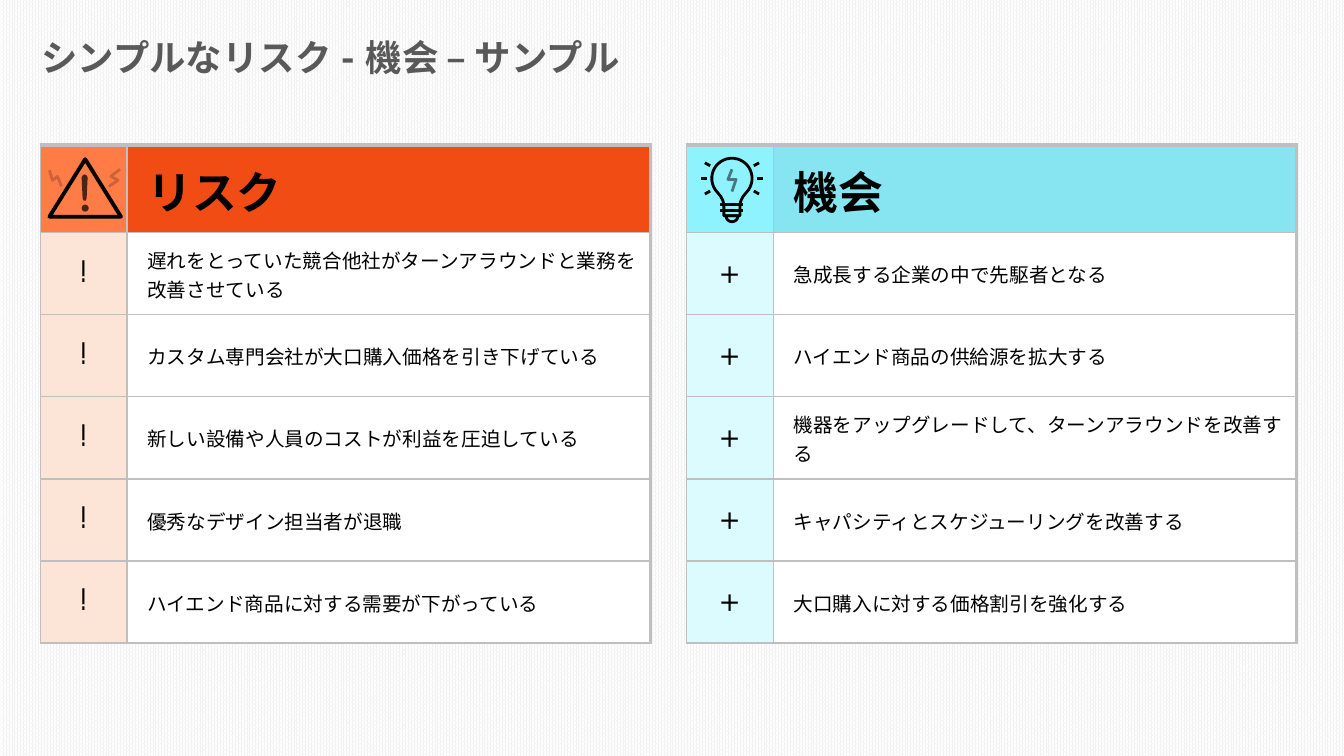
from math import cos, radians, sin

from lxml.etree import SubElement
from pptx import Presentation
from pptx.dml.color import RGBColor
from pptx.enum.dml import MSO_PATTERN
from pptx.enum.shapes import MSO_CONNECTOR, MSO_SHAPE
from pptx.enum.text import MSO_ANCHOR, PP_ALIGN
from pptx.oxml.ns import qn
from pptx.util import Inches, Pt

FONT = "TeX Gyre Adventor"
BLACK, WHITE, GRID = "000000", "FFFFFF", "BFBFBF"
TITLE = "シンプルなリスク - 機会 – サンプル"
PANELS = [
    {
        "heading": "リスク", "mark": "!", "left": 0.4,
        "icon_fill": "FF7C46", "heading_fill": "F04C13", "mark_fill": "FCE4D6",
        "items": [
            "遅れをとっていた競合他社がターンアラウンドと業務を\n改善させている",
            "カスタム専門会社が大口購入価格を引き下げている",
            "新しい設備や人員のコストが利益を圧迫している",
            "優秀なデザイン担当者が退職",
            "ハイエンド商品に対する需要が下がっている",
        ],
    },
    {
        "heading": "機会", "mark": "+", "left": 6.81,
        "icon_fill": "8EF3FF", "heading_fill": "86E5F1", "mark_fill": "DCFBFF",
        "items": [
            "急成長する企業の中で先駆者となる",
            "ハイエンド商品の供給源を拡大する",
            "機器をアップグレードして、ターンアラウンドを改善する",
            "キャパシティとスケジューリングを改善する",
            "大口購入に対する価格割引を強化する",
        ],
    },
]
TOP, HEIGHT, HEADING_HEIGHT = 1.44, 4.94, 0.87
COLUMNS = (0.86, 5.19)

WARNING_BOLTS = [
    [(0.49, 1.69), (0.52, 1.79), (0.57, 1.75), (0.61, 1.85)],
    [(1.19, 1.68), (1.1, 1.75), (1.17, 1.79), (1.08, 1.85)],
]
WARNING_TRIANGLE = [(0.845, 1.58), (1.2, 2.15), (0.49, 2.15)]
EXCLAMATION = [(0.81, 1.76), (0.82, 1.74), (0.84, 1.73), (0.86, 1.74), (0.87, 1.76),
               (0.86, 1.97), (0.85, 1.99), (0.83, 1.99), (0.82, 1.97)]
BULB_CENTER = (7.26, 1.77)
BULB_NECK = [(7.37, 1.95), (7.35, 1.99), (7.34, 2.03), (7.34, 2.14),
             (7.18, 2.14), (7.18, 2.03), (7.17, 1.99), (7.15, 1.95)]
BULB_BOLT = [(7.26, 1.68), (7.22, 1.78), (7.3, 1.78), (7.26, 1.9)]
RAY_ANGLES = (-150, -30, 0, 30, 150, 180)
RAY_REACH = (0.25, 0.31)
SOCKET_BARS = (2.03, 2.085)


def rgb(value):
    return RGBColor.from_string(value)


def add_text(paragraph, text, size, bold=False, color=BLACK):
    for index, line in enumerate(text.split("\n")):
        if index:
            paragraph.add_line_break()
        run = paragraph.add_run()
        run.text = line
        run.font.name = FONT
        run.font.size = Pt(size)
        run.font.bold = bold
        run.font.color.rgb = rgb(color)


def set_borders(cell, **widths):
    properties = cell._tc.get_or_add_tcPr()
    for side in "LRTB":
        border = SubElement(properties, qn(f"a:ln{side}"), w=str(Pt(widths.get(side, 1))))
        SubElement(SubElement(border, qn("a:solidFill")), qn("a:srgbClr"), val=GRID)


def fill_cell(cell, fill, text, size, row, column):
    set_borders(cell, T=1 if row else 3, R=2.25 if column else 1)
    cell.fill.solid()
    cell.fill.fore_color.rgb = rgb(fill)
    cell.vertical_anchor = MSO_ANCHOR.MIDDLE
    cell.margin_left = Inches(0.2 if column else 0.01)
    cell.margin_top = cell.margin_right = Inches(0.01)
    cell.margin_bottom = 0
    paragraph = cell.text_frame.paragraphs[0]
    paragraph.alignment = PP_ALIGN.LEFT if column else PP_ALIGN.CENTER
    if text:
        add_text(paragraph, text, size, bold=row == 0)


def add_panel(slide, panel):
    rows = [(panel["icon_fill"], "", panel["heading_fill"], panel["heading"])]
    rows += [(panel["mark_fill"], panel["mark"], WHITE, item) for item in panel["items"]]
    table = slide.shapes.add_table(
        len(rows), len(COLUMNS), Inches(panel["left"]), Inches(TOP),
        Inches(sum(COLUMNS)), Inches(HEIGHT)).table
    table.first_row = table.horz_banding = False
    for column, width in zip(table.columns, COLUMNS):
        column.width = Inches(width)
    item_height = (HEIGHT - HEADING_HEIGHT) / len(panel["items"])
    for index, (mark_fill, mark, text_fill, text) in enumerate(rows):
        table.rows[index].height = Inches(item_height if index else HEADING_HEIGHT)
        fill_cell(table.cell(index, 0), mark_fill, mark, 21, index, 0)
        fill_cell(table.cell(index, 1), text_fill, text, 14 if index else 32, index, 1)


def paint(shape, opacity=100, filled=False, width=2):
    shape.shadow.inherit = False
    if filled:
        shape.fill.solid()
        shape.fill.fore_color.rgb = rgb(BLACK)
        shape.line.fill.background()
    else:
        shape.fill.background()
        shape.line.color.rgb = rgb(BLACK)
        shape.line.width = Pt(width)
    if opacity < 100:
        for color in shape._element.spPr.iter(qn("a:srgbClr")):
            SubElement(color, qn("a:alpha"), val=str(opacity * 1000))


def add_outline(slide, points, close=False, **style):
    start, *others = [(Inches(x), Inches(y)) for x, y in points]
    builder = slide.shapes.build_freeform(*start)
    builder.add_line_segments(others, close=close)
    paint(builder.convert_to_shape(), **style)


def add_line(slide, start, end):
    line = slide.shapes.add_connector(
        MSO_CONNECTOR.STRAIGHT, *[Inches(value) for value in (*start, *end)])
    line.line.color.rgb = rgb(BLACK)
    line.line.width = Pt(2)
    SubElement(line._element.spPr, qn("a:effectLst"))


def around(center, radius, angle):
    return (center[0] + radius * cos(radians(angle)), center[1] + radius * sin(radians(angle)))


def add_warning(slide):
    for bolt in WARNING_BOLTS:
        add_outline(slide, bolt, opacity=20)
    add_outline(slide, WARNING_TRIANGLE, close=True, width=2.75)
    add_outline(slide, EXCLAMATION, close=True, filled=True, opacity=70)
    dot = slide.shapes.add_shape(
        MSO_SHAPE.OVAL, Inches(0.81), Inches(2.03), Inches(0.07), Inches(0.07))
    paint(dot, filled=True, opacity=70)


def add_bulb(slide):
    glass = [around(BULB_CENTER, 0.2, angle) for angle in range(135, 406, 10)]
    add_outline(slide, glass + BULB_NECK, close=True)
    base = [around((7.26, 2.14), 0.06, angle) for angle in range(0, 181, 15)]
    add_outline(slide, base, close=True)
    for height in SOCKET_BARS:
        add_line(slide, (7.14, height), (7.37, height))
    for angle in RAY_ANGLES:
        add_line(slide, *[around(BULB_CENTER, reach, angle) for reach in RAY_REACH])
    add_outline(slide, BULB_BOLT, opacity=50)


def main():
    deck = Presentation()
    deck.slide_width, deck.slide_height = Inches(13.33), Inches(7.5)
    slide = deck.slides.add_slide(deck.slide_layouts[5])
    backdrop = slide.background.fill
    backdrop.patterned()
    backdrop.pattern = MSO_PATTERN.PERCENT_80
    backdrop.fore_color.rgb = rgb("F2F2F2")
    backdrop.back_color.rgb = rgb(WHITE)

    title = slide.shapes.title
    title.left, title.top = Inches(0.31), Inches(0.3)
    title.width, title.height = Inches(8.66), Inches(0.54)
    title.text_frame.vertical_anchor = MSO_ANCHOR.TOP
    heading = title.text_frame.paragraphs[0]
    heading.alignment = PP_ALIGN.LEFT
    add_text(heading, TITLE, 26, bold=True, color="595959")

    for panel in PANELS:
        add_panel(slide, panel)
    add_warning(slide)
    add_bulb(slide)
    deck.save("out.pptx")


if __name__ == "__main__":
    main()
